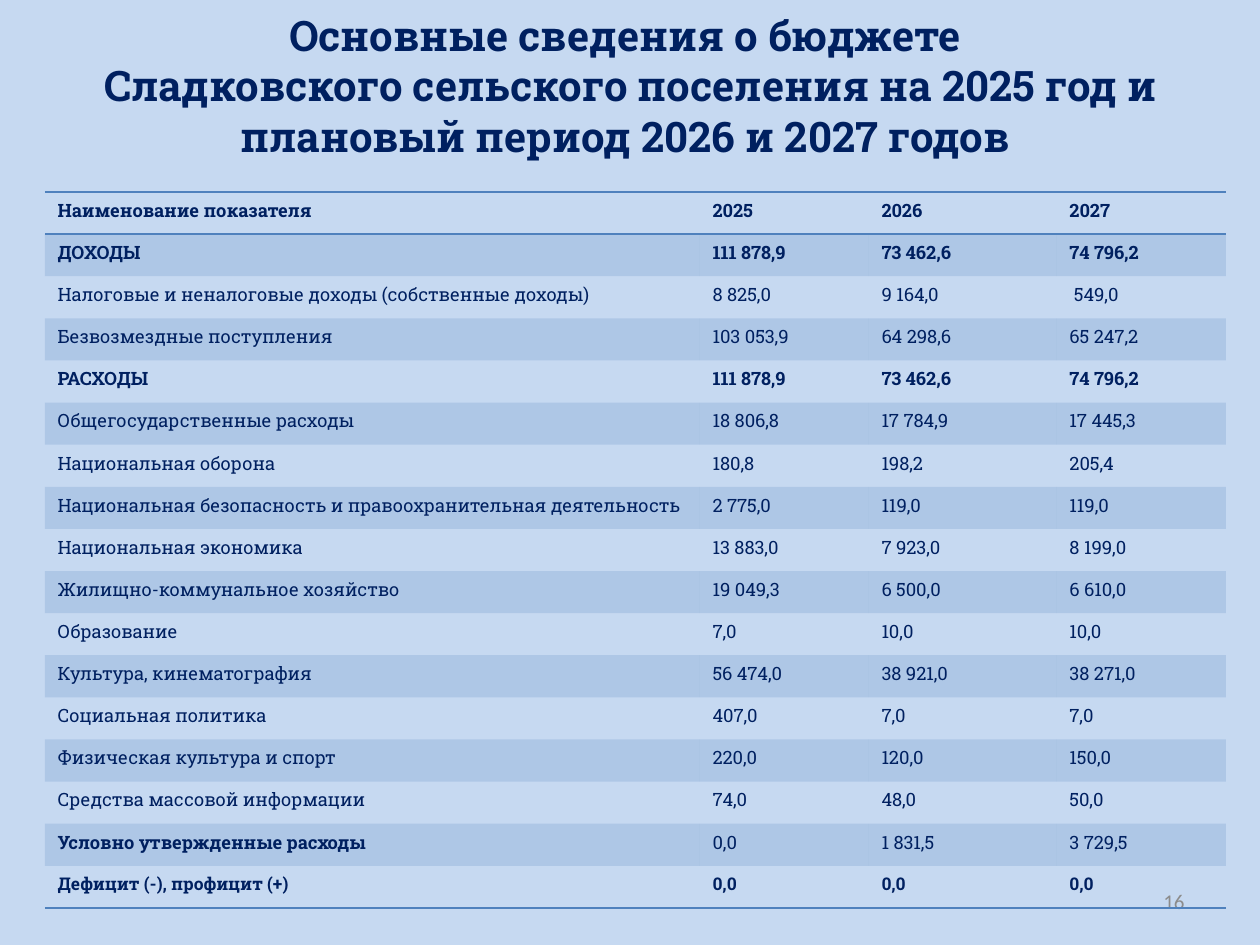
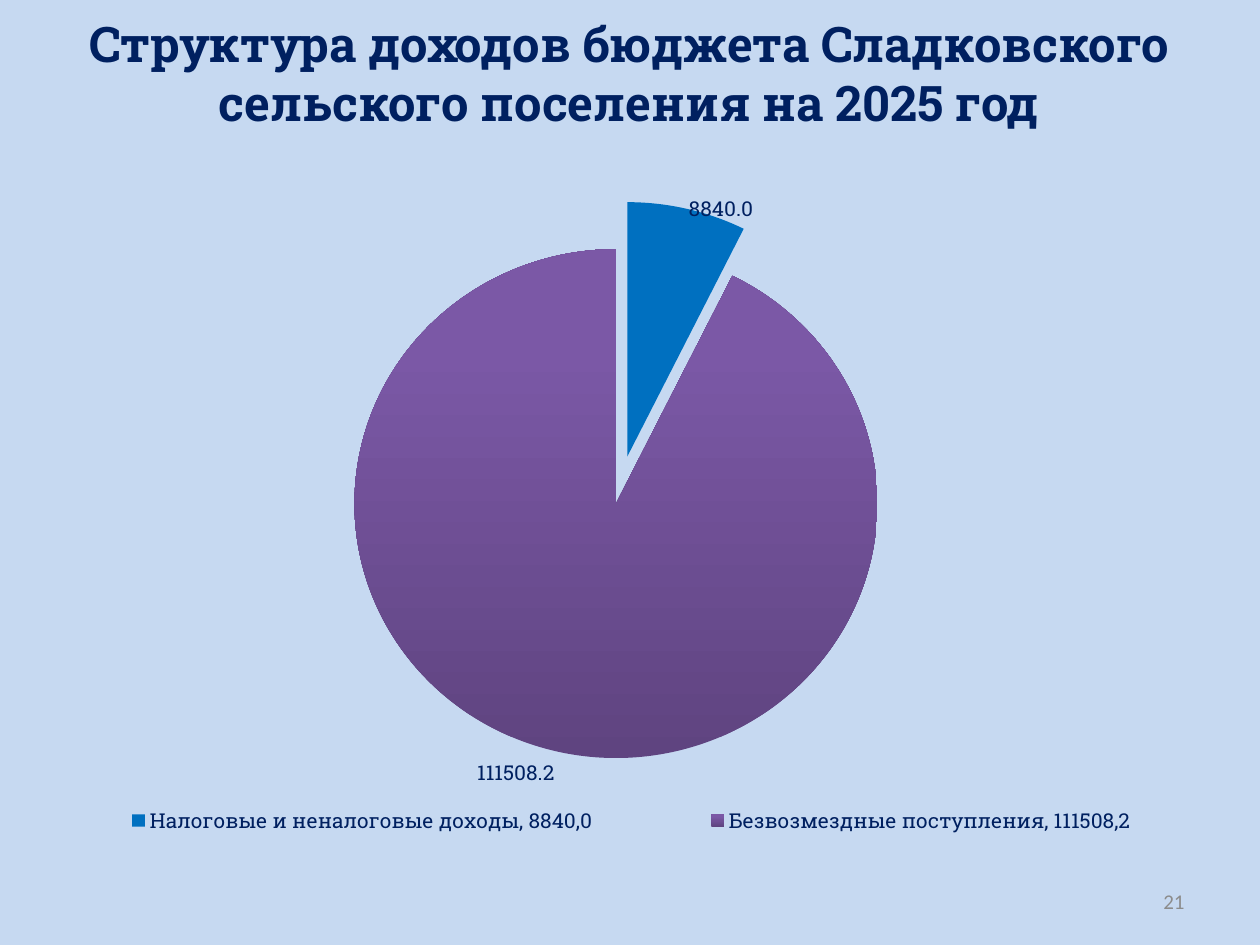
from lxml import etree
from pptx import Presentation
from pptx.chart.data import CategoryChartData
from pptx.dml.color import RGBColor
from pptx.enum.chart import XL_CHART_TYPE, XL_LABEL_POSITION, XL_LEGEND_POSITION
from pptx.enum.text import MSO_ANCHOR, MSO_AUTO_SIZE, PP_ALIGN
from pptx.oxml import parse_xml
from pptx.oxml.ns import nsdecls, qn
from pptx.util import Pt

PIE = XL_CHART_TYPE.PIE
LABELS_OUTSIDE = XL_LABEL_POSITION.OUTSIDE_END
LEGEND_BOTTOM = XL_LEGEND_POSITION.BOTTOM
MIDDLE = MSO_ANCHOR.MIDDLE
NO_AUTOFIT = MSO_AUTO_SIZE.NONE
CENTER, RIGHT = PP_ALIGN.CENTER, PP_ALIGN.RIGHT

PX = 914400 / 126
COLORS = {
    "background": "C6D9F1",
    "text": "002060",
    "number": "8C8C8C",
    "table": "4F81BD",
    "own income": "0070C0",
    "transfers dark": "5F4480",
    "transfers light": "7B58A6",
}
FONT = "Roboto Slab"
NUMBER_FONT = "Calibri"
PLAIN_TABLE_STYLE = "{2D5ABB26-0587-4C30-8999-92F81FD0307C}"


def px(*lengths):
    return [round(length * PX) for length in lengths]


def style_font(font, size, color="text", bold=False, name=FONT):
    font.name, font.size, font.bold = name, Pt(size), bold
    font.color.rgb = RGBColor.from_string(COLORS[color])


presentation = Presentation()
presentation.slide_width, presentation.slide_height = px(1260, 945)

# Shared frame: background, title and page number
pages = [
    {
        "title": ["Основные сведения о бюджете ",
                  "Сладковского сельского поселения на 2025 год и "
                  "плановый период 2026 и 2027 годов "],
        "box": (3, 37, 1255, 148), "size": 24, "bottom inset": 58, "number": "16",
    },
    {
        "title": ["Структура доходов бюджета Сладковского "
                  "сельского поселения на 2025 год"],
        "box": (-1, 19, 1260, 106), "size": 28, "bottom inset": 6, "number": "21",
    },
]
slides = []
for page in pages:
    slide = presentation.slides.add_slide(presentation.slide_layouts[5])
    slides.append(slide)
    slide.background.fill.solid()
    slide.background.fill.fore_color.rgb = RGBColor.from_string(COLORS["background"])

    title = slide.shapes.title
    title.left, title.top, title.width, title.height = px(*page["box"])
    frame = title.text_frame
    frame.auto_size, frame.vertical_anchor, frame.word_wrap = NO_AUTOFIT, MIDDLE, True
    frame.margin_bottom = px(page["bottom inset"])[0]
    paragraph = frame.paragraphs[0]
    paragraph.alignment = CENTER
    for index, line in enumerate(page["title"]):
        if index:
            paragraph.add_line_break()
        run = paragraph.add_run()
        run.text = line
        style_font(run.font, page["size"], bold=True)

    number = slide.shapes.add_textbox(*px(903, 876, 294, 50))
    number.text_frame.word_wrap = True
    number.text_frame.vertical_anchor = MIDDLE
    paragraph = number.text_frame.paragraphs[0]
    paragraph.alignment = RIGHT
    run = paragraph.add_run()
    run.text = page["number"]
    style_font(run.font, 12, "number", name=NUMBER_FONT)

table_slide, chart_slide = slides

# Budget table
budget_rows = [
    ("Наименование показателя", "2025", "2026", "2027"),
    ("ДОХОДЫ", "111 878,9", "73 462,6", "74 796,2"),
    ("Налоговые и неналоговые доходы (собственные доходы)", "8 825,0", "9 164,0", " 549,0"),
    ("Безвозмездные поступления", "103 053,9", "64 298,6", "65 247,2"),
    ("РАСХОДЫ", "111 878,9", "73 462,6", "74 796,2"),
    ("Общегосударственные расходы", "18 806,8", "17 784,9", "17 445,3"),
    ("Национальная оборона", "180,8", "198,2", "205,4"),
    ("Национальная безопасность и правоохранительная деятельность",
     "2 775,0", "119,0", "119,0"),
    ("Национальная экономика", "13 883,0", "7 923,0", "8 199,0"),
    ("Жилищно-коммунальное хозяйство", "19 049,3", "6 500,0", "6 610,0"),
    ("Образование", "7,0", "10,0", "10,0"),
    ("Культура, кинематография", "56 474,0", "38 921,0", "38 271,0"),
    ("Социальная политика", "407,0", "7,0", "7,0"),
    ("Физическая культура и спорт", "220,0", "120,0", "150,0"),
    ("Средства массовой информации", "74,0", "48,0", "50,0"),
    ("Условно утвержденные расходы", "0,0", "1 831,5", "3 729,5"),
    ("Дефицит (-), профицит (+)", "0,0", "0,0", "0,0"),
]
last_row = len(budget_rows) - 1
bold_rows = {0, 1, 4, last_row}
bold_label_rows = bold_rows | {last_row - 1}
borders = {0: ("lnT", "lnB"), last_row: ("lnB",)}

table = table_slide.shapes.add_table(len(budget_rows), 4, *px(45, 192, 1181, 716)).table
table.first_row = table.horz_banding = False
table._tbl.tblPr.find(qn("a:tableStyleId")).text = PLAIN_TABLE_STYLE
for column, width in zip(table.columns, px(655, 169, 188, 169)):
    column.width = width

for row_index, values in enumerate(budget_rows):
    for column_index, value in enumerate(values):
        cell = table.cell(row_index, column_index)
        run = cell.text_frame.paragraphs[0].add_run()
        run.text = value
        bold = row_index in (bold_rows if column_index else bold_label_rows)
        style_font(run.font, 10 if row_index == last_row else 10.5, bold=bold)

        properties = cell._tc.get_or_add_tcPr()
        for side in borders.get(row_index, ()):
            properties.append(parse_xml(
                f'<a:{side} {nsdecls("a")} w="12700"><a:solidFill>'
                f'<a:srgbClr val="{COLORS["table"]}"/></a:solidFill></a:{side}>'))
        if row_index % 2:
            cell.fill.solid()
            cell.fill.fore_color.rgb = RGBColor.from_string(COLORS["table"])
            color = properties.find(".//" + qn("a:srgbClr"))
            etree.SubElement(color, qn("a:alpha"), val="20000")
        else:
            cell.fill.background()

# Income pie
chart_data = CategoryChartData(number_format="0.0")
chart_data.categories = ["Налоговые и неналоговые доходы, 8840,0",
                         "Безвозмездные поступления, 111508,2"]
chart_data.add_series("Series 1", (8840, 111508.2))
chart = chart_slide.shapes.add_chart(PIE, *px(-5, 175, 1260, 735), chart_data).chart
chart.has_title = False
style_font(chart.font, 10)
chart.has_legend = True
chart.legend.position = LEGEND_BOTTOM
chart.legend.include_in_layout = False
style_font(chart.legend.font, 12)

plot = chart.plots[0]
plot.vary_by_categories = True
series = plot.series[0]
own_income, transfers = (series.points[index].format.fill for index in range(2))
own_income.solid()
own_income.fore_color.rgb = RGBColor.from_string(COLORS["own income"])
transfers.gradient()
transfers.gradient_angle = 90
for stop, position, shade in zip(transfers.gradient_stops, (0, 0.8),
                                 ("transfers dark", "transfers light")):
    stop.position = position
    stop.color.rgb = RGBColor.from_string(COLORS[shade])

labels = series.data_labels
labels.show_value = True
labels.position = LABELS_OUTSIDE
labels.number_format, labels.number_format_is_linked = "0.0", False
style_font(labels.font, 12)

# The whole series is pulled apart slightly, the transfers slice further
own_point, transfers_point = series._element.findall(qn("c:dPt"))
for following, percent in ((own_point, 4), (transfers_point.find(qn("c:spPr")), 15)):
    following.addprevious(parse_xml(f'<c:explosion {nsdecls("c")} val="{percent}"/>'))

plot_area = chart._chartSpace.chart.plotArea
for old_layout in plot_area.findall(qn("c:layout")):
    plot_area.remove(old_layout)
legend_xml = chart.legend._element
for old_layout in legend_xml.findall(qn("c:layout")):
    legend_xml.remove(old_layout)
for parent, index, target, box in (
        (plot_area, 0, ["inner"], ("0.02", "0.01", "0.96", "0.74")),
        (legend_xml, 1, [], ("0.02", "0.84", "0.97", "0.07"))):
    layout = etree.Element(qn("c:layout"))
    manual = etree.SubElement(layout, qn("c:manualLayout"))
    for value in target:
        etree.SubElement(manual, qn("c:layoutTarget"), val=value)
    for tag, value in zip(("xMode", "yMode", "x", "y", "w", "h"), ("edge", "edge", *box)):
        etree.SubElement(manual, qn("c:" + tag), val=value)
    parent.insert(index, layout)

presentation.save("out.pptx")
